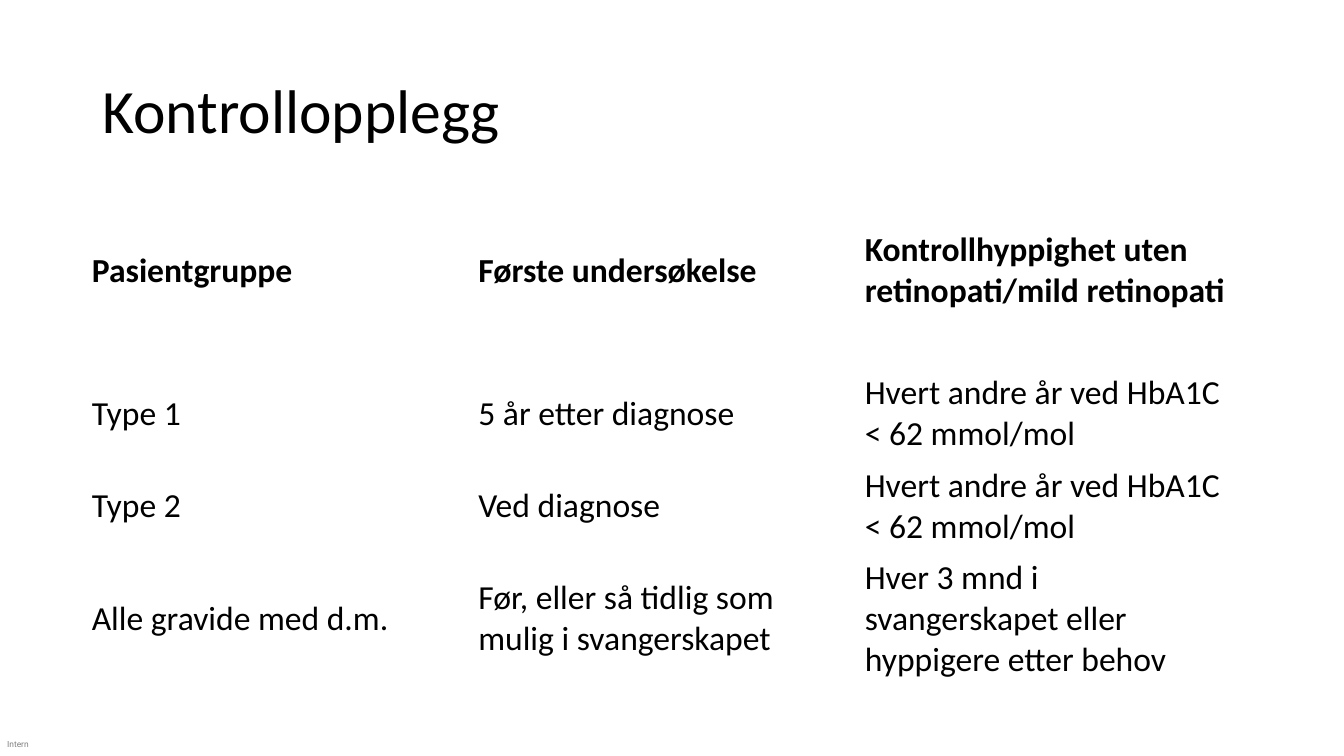
from dataclasses import dataclass

from lxml import etree
from pptx import Presentation
from pptx.dml.color import RGBColor
from pptx.enum.text import MSO_ANCHOR
from pptx.oxml.ns import qn
from pptx.slide import Slide
from pptx.text.text import TextFrame
from pptx.util import Cm, Pt

MIDDLE = MSO_ANCHOR.MIDDLE
TOP = MSO_ANCHOR.TOP
BLACK = "000000"
BODY_FONT = "Calibri"
COLUMN_WIDTH = 9.74


@dataclass
class Label:
    text: str
    left: float
    top: float
    width: float
    height: float
    size: float
    font: str = BODY_FONT
    anchor: MSO_ANCHOR = MIDDLE
    margin_x: float = 0.25
    margin_y: float = 0.13
    line_spacing: float = 1.0
    wrap: bool = True
    opacity: int = 100


@dataclass
class ControlRow:
    height: float
    texts: tuple[str, str, str] = ("", "", "")
    bold: bool = False


HEADING = Label("Kontrollopplegg", 2.33, 1.01, 29.21, 3.68, 44, line_spacing=0.9)
CLASSIFICATION = Label("Intern", 0.18, 18.62, 0.58, 0.25, 6, font="Roboto", anchor=TOP,
                       margin_x=0, margin_y=0, wrap=False, opacity=50)
CONTROL_ROWS = [
    ControlRow(2.33, ("Pasientgruppe", "Første undersøkelse",
                      "Kontrollhyppighet uten retinopati/mild retinopati"), bold=True),
    ControlRow(1.27),
    ControlRow(2.33, ("Type 1", "5 år etter diagnose",
                      "Hvert andre år ved HbA1C < 62 mmol/mol")),
    ControlRow(2.33, ("Type 2", "Ved diagnose",
                      "Hvert andre år ved HbA1C < 62 mmol/mol")),
    ControlRow(3.36, ("Alle gravide med d.m.",
                      "Før, eller så tidlig som mulig i svangerskapet",
                      "Hver 3 mnd i svangerskapet eller hyppigere etter behov")),
    ControlRow(1.09),
]


def color(value: str) -> RGBColor:
    return RGBColor.from_string(value)


def format_text(frame: TextFrame, font: str, size: float, bold: bool = False,
                opacity: int = 100) -> None:
    for paragraph in frame.paragraphs:
        for run in paragraph.runs:
            run.font.name = font
            run.font.size = Pt(size)
            run.font.bold = bold
            run.font.color.rgb = color(BLACK)
            if opacity < 100:
                for tint in run.font.fill._xPr.iter(qn("a:srgbClr")):
                    etree.SubElement(tint, qn("a:alpha"), val=str(opacity * 1000))


def add_label(slide: Slide, label: Label) -> None:
    box = slide.shapes.add_textbox(Cm(label.left), Cm(label.top),
                                   Cm(label.width), Cm(label.height))
    frame = box.text_frame
    frame.word_wrap = label.wrap
    frame.vertical_anchor = label.anchor
    frame.margin_left = frame.margin_right = Cm(label.margin_x)
    frame.margin_top = frame.margin_bottom = Cm(label.margin_y)
    frame.text = label.text
    frame.paragraphs[0].line_spacing = label.line_spacing
    format_text(frame, label.font, label.size, opacity=label.opacity)


def add_control_table(slide: Slide, rows: list[ControlRow]) -> None:
    columns = len(rows[0].texts)
    table = slide.shapes.add_table(
        len(rows), columns, Cm(2.06), Cm(5.66), Cm(columns * COLUMN_WIDTH),
        Cm(sum(row.height for row in rows))).table
    table.first_row = False
    table.horz_banding = False
    for column in table.columns:
        column.width = Cm(COLUMN_WIDTH)
    for table_row, row in zip(table.rows, rows):
        table_row.height = Cm(row.height)
        for cell, text in zip(table_row.cells, row.texts):
            cell.fill.background()
            cell.vertical_anchor = MIDDLE
            cell.text_frame.text = text
            format_text(cell.text_frame, BODY_FONT, 24, row.bold)


def main() -> None:
    presentation = Presentation()
    presentation.slide_width = Cm(33.87)
    presentation.slide_height = Cm(19.05)
    slide = presentation.slides.add_slide(presentation.slide_layouts[6])
    add_label(slide, CLASSIFICATION)
    add_label(slide, HEADING)
    add_control_table(slide, CONTROL_ROWS)
    presentation.save("out.pptx")


if __name__ == "__main__":
    main()
